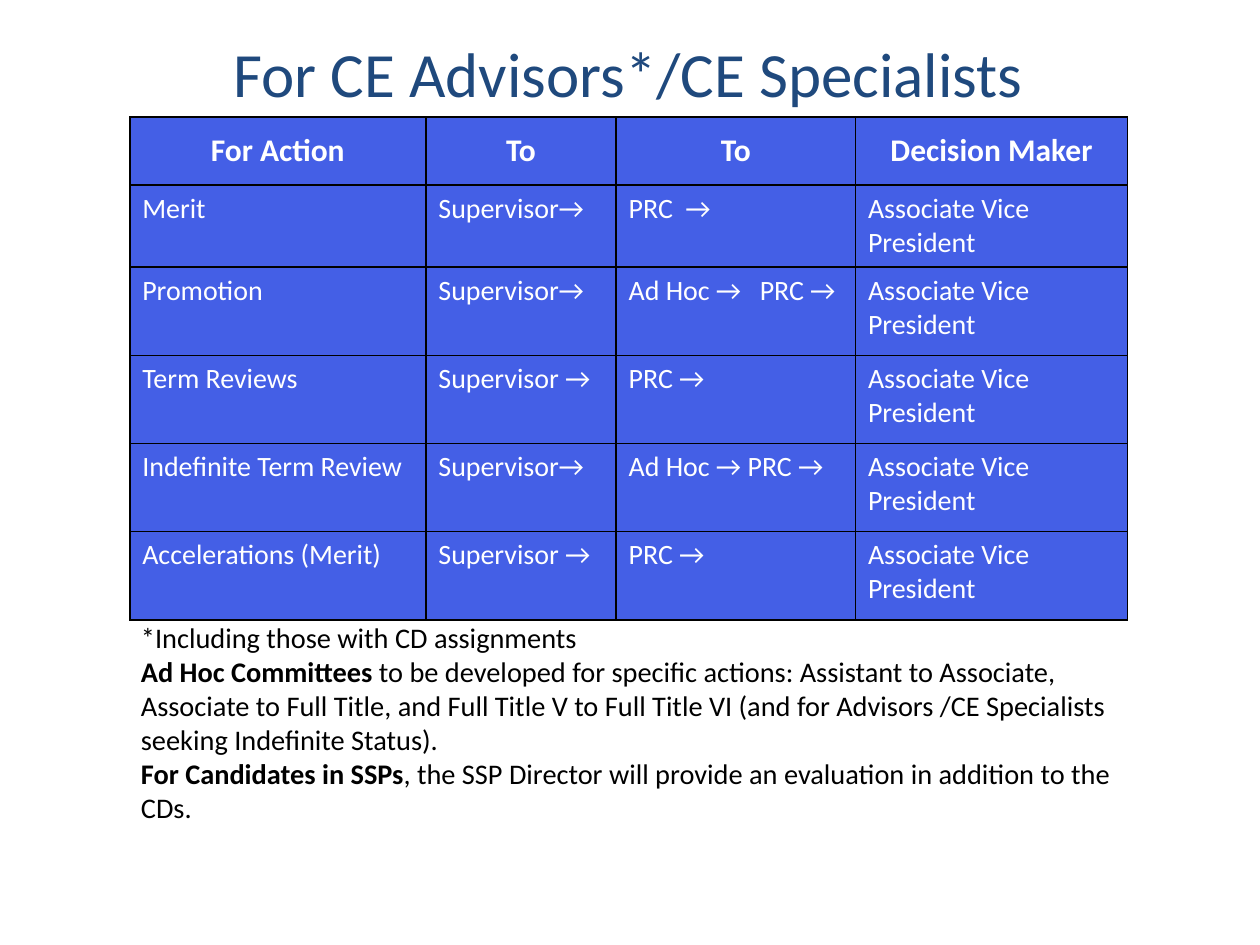
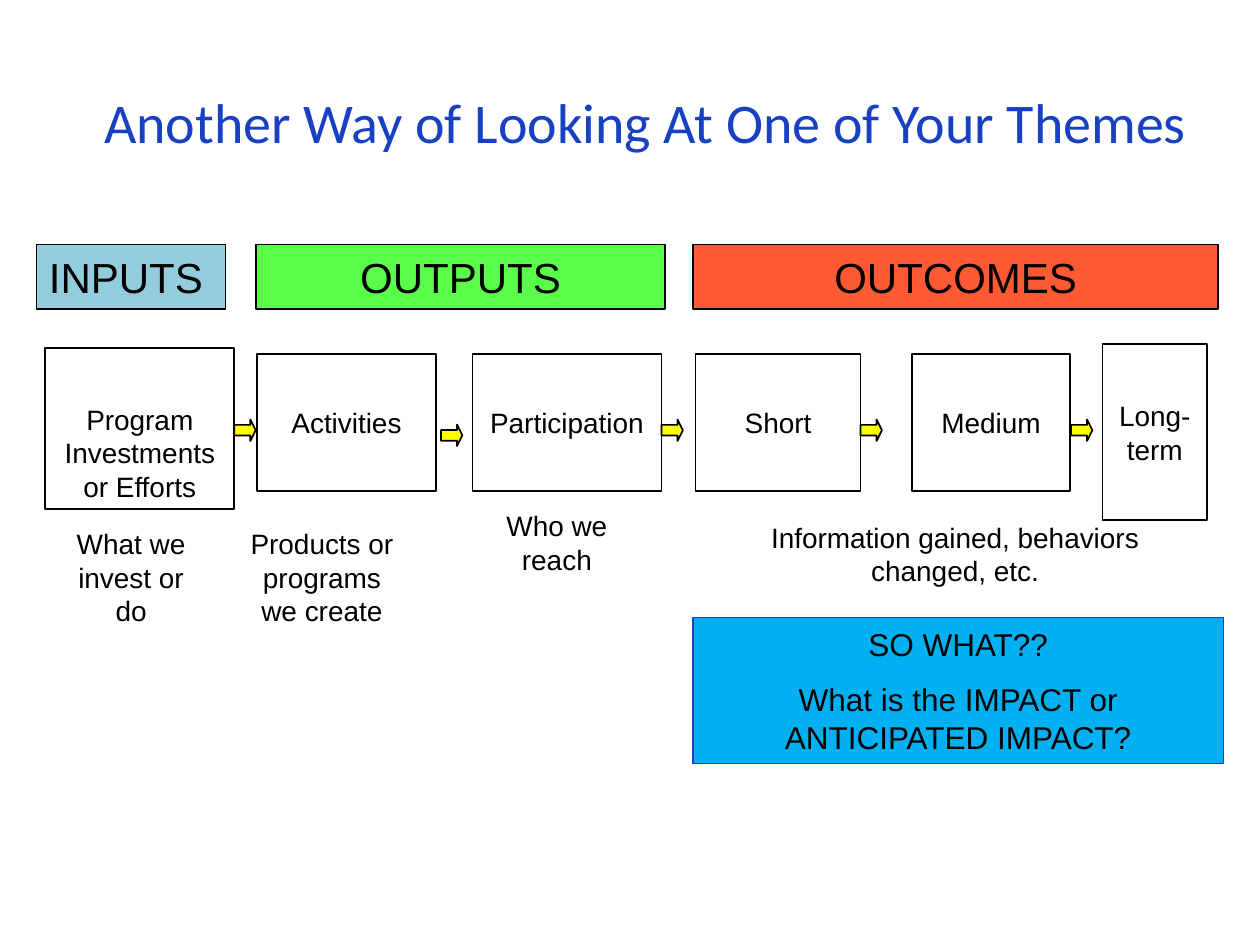
from lxml import etree
from pptx import Presentation, util as u
from pptx.dml.color import RGBColor
from pptx.enum import shapes, text
from pptx.oxml import ns

COLORS = {
    "ink": "000000", "paper": "FFFFFF", "navy": "1F497D", "royal": "1740C3",
    "table": "445FE6", "inputs": "93CDDD", "outputs": "5AFD49",
    "outcomes": "FF5A33", "impact": "00B0F0", "arrow": "FFFF00",
}
SLIDE_SIZE = (u.Inches(10), u.Inches(7.5))
UNIT = SLIDE_SIZE[0] // 100  # the grid is 100 columns by 75 rows
LEFT, CENTER = text.PP_ALIGN.LEFT, text.PP_ALIGN.CENTER
TOP, MIDDLE, BOTTOM = (text.MSO_ANCHOR.TOP, text.MSO_ANCHOR.MIDDLE,
                       text.MSO_ANCHOR.BOTTOM)

TITLE = {"name": "Calibri", "size": u.Pt(36)}
CELL = {"name": "Calibri", "size": u.Pt(16), "bold": False}
HEAD = CELL | {"size": u.Pt(18), "bold": True}
NOTE = {"name": "Calibri", "size": u.Pt(16.2)}
BAND = {"name": "Arial", "size": u.Pt(24)}
LABEL = BAND | {"size": u.Pt(16)}
IMPACT = BAND | {"size": u.Pt(18)}

DECIDER = "Associate Vice President"
ACTIONS = [
    ("For Action", "To", "To", "Decision Maker"),
    ("Merit", "Supervisor→", "PRC\t→", DECIDER),
    ("Promotion", "Supervisor→", "Ad Hoc →\tPRC →", DECIDER),
    ("Term Reviews", "Supervisor →", "PRC →", DECIDER),
    ("Indefinite Term Review", "Supervisor→", "Ad Hoc → PRC →", DECIDER),
    ("Accelerations (Merit)", "Supervisor →", "PRC →", DECIDER),
]
ACTION_COLUMNS = (23.5, 15.1, 19, 21.6)
ACTION_ROWS = (5.4, 6.5, 7, 7, 7, 7)
TAB_STOPS = {"PRC\t→": 4.5, "Ad Hoc →\tPRC →": 10.4}

# Each note is a list of (words, bold) spans.
NOTES = [
    [("*Including those with CD assignments", False)],
    [("Ad Hoc Committees ", True),
     ("to be developed for specific actions: Assistant to Associate, "
      "Associate to Full Title, and Full Title V to Full Title VI "
      "(and for Advisors /CE Specialists seeking Indefinite Status).", False)],
    [("For Candidates in SSPs", True),
     (", the SSP Director will provide an evaluation in addition to the CDs.",
      False)],
]

# Places are left, top, width, height in grid units.
BANDS = [
    ("INPUTS", (2.9, 19.4, 15, 5.1), "inputs", LEFT),
    ("OUTPUTS", (20.3, 19.4, 32.5, 5.1), "outputs", CENTER),
    ("OUTCOMES", (55, 19.4, 41.7, 5.1), "outcomes", CENTER),
]
STAGES = [
    ("Program Investments or Efforts", (3.6, 27.6, 15, 12.8), BOTTOM),
    ("Activities", (20.4, 28.1, 14.2, 10.9), MIDDLE),
    ("Participation", (37.5, 28.1, 15, 10.9), MIDDLE),
    ("Short", (55.2, 28.1, 13.1, 10.9), MIDDLE),
    ("Medium", (72.4, 28.1, 12.5, 10.9), MIDDLE),
    ("Long-term", (87.5, 27.3, 8.3, 14), MIDDLE),
]
ARROWS = [(18.6, 33.3), (35, 33.7), (52.5, 33.3), (68.3, 33.3), (85, 33.3)]
CAPTIONS = [
    ("What we invest or do", (5, 41.3, 10.8, 9.1)),
    ("Products or programs we create", (18.6, 41.3, 13.9, 9.1)),
    ("Who we reach", (37.5, 39.9, 13.4, 6.4)),
    ("Information gained, behaviors changed, etc.", (55.8, 40.8, 40, 6.4)),
]


def rgb(color):
    return RGBColor.from_string(COLORS[color])


def grid(values):
    return [round(value * UNIT) for value in values]


def set_all(target, values):
    for name, value in values.items():
        setattr(target, name, value)


def set_font(font, style, color):
    set_all(font, style)
    font.color.rgb = rgb(color)


def write(frame, lines, style, color="ink", align=CENTER, anchor=MIDDLE, gap=0):
    """Fill a text frame with one paragraph a line, gap points apart."""
    set_all(frame, {"word_wrap": True, "vertical_anchor": anchor})
    for number, line in enumerate(lines):
        para = frame.add_paragraph() if number else frame.paragraphs[0]
        para.text = line
        para.alignment = align
        if number:
            para.space_before = u.Pt(gap)
        set_font(para.font, style, color)


def add_page(deck, title, place, style, color):
    page = deck.slides.add_slide(deck.slide_layouts[5])
    box = page.shapes.title
    set_all(box, dict(zip(("left", "top", "width", "height"), grid(place))))
    write(box.text_frame, [title], style, color)
    return page


def add_shape(page, kind, place, fill=None, line="ink", weight=1):
    shape = page.shapes.add_shape(kind, *grid(place))
    shape.shadow.inherit = False
    if fill:
        shape.fill.solid()
        shape.fill.fore_color.rgb = rgb(fill)
    else:
        shape.fill.background()
    shape.line.color.rgb = rgb(line)
    shape.line.width = u.Pt(weight)
    return shape


def add_box(page, lines, place, style, fill=None, line="ink", weight=1, **layout):
    box = add_shape(page, shapes.MSO_SHAPE.RECTANGLE, place, fill, line, weight)
    write(box.text_frame, lines, style, **layout)


def add_arrow(page, left, top):
    arrow = add_shape(page, shapes.MSO_SHAPE.RIGHT_ARROW, (left, top, 1.7, 1.7), "arrow")
    arrow.adjustments[0], arrow.adjustments[1] = 0.5, 0.25


def add_caption(page, words, place):
    box = page.shapes.add_textbox(*grid(place))
    write(box.text_frame, [words], LABEL, anchor=TOP)


def add_notes(page, place):
    frame = page.shapes.add_textbox(*grid(place)).text_frame
    set_all(frame, {"word_wrap": True, "margin_top": 0, "margin_bottom": 0})
    for number, note in enumerate(NOTES):
        para = frame.add_paragraph() if number else frame.paragraphs[0]
        for words, bold in note:
            span = para.add_run()
            span.text = words
            set_font(span.font, NOTE | {"bold": bold}, "ink")


def add_borders(cell):
    """Draw the four cell edges, which must come before the cell's fill."""
    properties = cell._tc.get_or_add_tcPr()
    for index, edge in enumerate(("lnL", "lnR", "lnT", "lnB")):
        line = etree.Element(ns.qn(f"a:{edge}"), w=str(u.Pt(1)))
        fill = etree.SubElement(line, ns.qn("a:solidFill"))
        etree.SubElement(fill, ns.qn("a:srgbClr"), val=COLORS["ink"])
        properties.insert(index, line)


def add_tab_stop(para, column):
    tabs = etree.SubElement(para._p.get_or_add_pPr(), ns.qn("a:tabLst"))
    etree.SubElement(tabs, ns.qn("a:tab"), pos=str(round(column * UNIT)), algn="l")


def add_action_table(page, left, top):
    size = (sum(ACTION_COLUMNS), sum(ACTION_ROWS))
    table = page.shapes.add_table(len(ACTION_ROWS), len(ACTION_COLUMNS),
                                  *grid((left, top, *size))).table
    for column, width in zip(table.columns, grid(ACTION_COLUMNS)):
        column.width = width
    for row, height in zip(table.rows, grid(ACTION_ROWS)):
        row.height = height
    for row, entries in enumerate(ACTIONS):
        style, align, anchor = (CELL, LEFT, TOP) if row else (HEAD, CENTER, MIDDLE)
        for column, words in enumerate(entries):
            cell = table.cell(row, column)
            cell.fill.solid()
            cell.fill.fore_color.rgb = rgb("table")
            add_borders(cell)
            if words in TAB_STOPS:
                add_tab_stop(cell.text_frame.paragraphs[0], TAB_STOPS[words])
            write(cell.text_frame, [words], style, "paper", align)
            cell.vertical_anchor = anchor


def build_actions(deck):
    page = add_page(deck, "For CE Advisors*/CE Specialists",
                    (10.2, 3.2, 79.3, 5), TITLE, "navy")
    add_action_table(page, 10.3, 9.3)
    add_notes(page, (10.2, 49.2, 79.2, 16.6))


def build_themes(deck):
    page = add_page(deck, "Another Way of Looking At One of Your Themes",
                    (2.5, 4.2, 97.5, 10.8), TITLE | {"size": u.Pt(32)}, "royal")
    for words, place, fill, align in BANDS:
        add_box(page, [words], place, BAND, fill, align=align)
    for words, place, anchor in STAGES:
        add_box(page, [words], place, LABEL, anchor=anchor)
    for left, top in ARROWS:
        add_arrow(page, left, top)
    for words, place in CAPTIONS:
        add_caption(page, words, place)
    add_box(page, ["SO WHAT??", "What is the IMPACT or ANTICIPATED IMPACT?"],
            (55, 49, 42.1, 11.6), IMPACT, "impact", "royal", 0.75, gap=10)


def main():
    deck = Presentation()
    deck.slide_width, deck.slide_height = SLIDE_SIZE
    build_actions(deck)
    build_themes(deck)
    deck.save("out.pptx")


if __name__ == "__main__":
    main()
